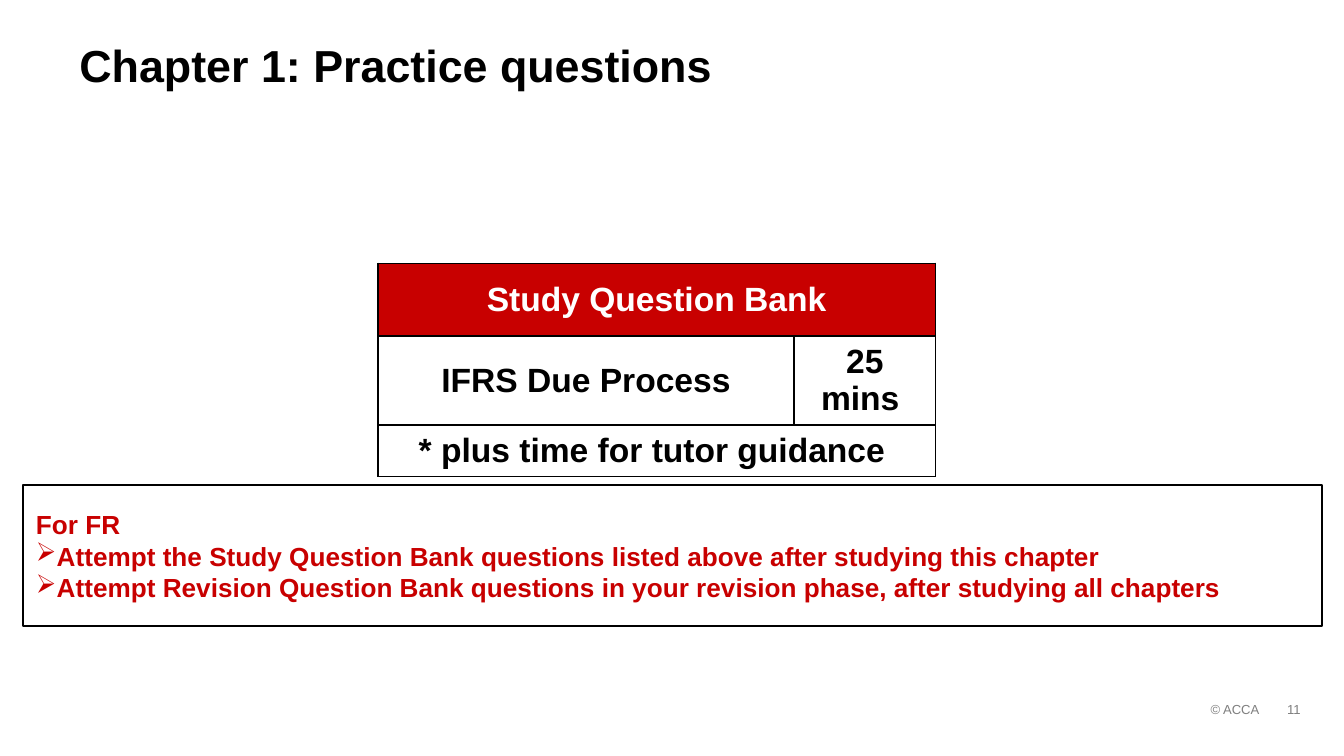
import pptx
import pptx.util
import pptx.dml.color
import pptx.enum.shapes
import pptx.enum.text
import pptx.oxml
import pptx.oxml.ns

Cm, Pt = pptx.util.Cm, pptx.util.Pt
Rgb = pptx.dml.color.RGBColor
Align = pptx.enum.text.PP_ALIGN
Anchor = pptx.enum.text.MSO_ANCHOR

BLACK = Rgb(0x00, 0x00, 0x00)
WHITE = Rgb(0xFF, 0xFF, 0xFF)
RED = Rgb(0xC8, 0x00, 0x00)
GREY = Rgb(0x7F, 0x7F, 0x7F)

# Text formats by role
TITLE = {"size": Pt(24), "bold": True, "color": BLACK}
HEAD = {"size": Pt(18), "bold": True, "color": WHITE}
CELL = {**HEAD, "color": BLACK}
NOTE = {"size": Pt(14), "bold": True, "color": RED}
FOOT = {"size": Pt(7), "bold": False, "color": GREY}


def write(para, text, form, align=Align.LEFT):
    """Fill a paragraph and apply its format."""
    run = para.add_run()
    run.text = text
    para.alignment = align
    for name, value in {"name": "Arial", **form}.items():
        if name == "color":
            run.font.color.rgb = value
        else:
            setattr(run.font, name, value)


def set_frame(frame, side=0, edge=0, anchor=Anchor.TOP):
    """Set the margins and anchor of a text frame."""
    form = {
        "margin_left": Cm(side), "margin_right": Cm(side),
        "margin_top": Cm(edge), "margin_bottom": Cm(edge),
        "vertical_anchor": anchor, "word_wrap": True,
        "auto_size": pptx.enum.text.MSO_AUTO_SIZE.NONE,
    }
    for name, value in form.items():
        setattr(frame, name, value)


def add_title(slide, box):
    title = slide.shapes.title
    title.left, title.top, title.width, title.height = map(Cm, box)
    set_frame(title.text_frame, anchor=Anchor.MIDDLE)
    para = title.text_frame.paragraphs[0]
    para.line_spacing = 0.9
    write(para, "Chapter 1: Practice questions", TITLE)


def add_border(cell):
    props = cell._tc.get_or_add_tcPr()
    for place, side in enumerate(("lnL", "lnR", "lnT", "lnB")):
        props.insert(place, pptx.oxml.parse_xml(
            f'<a:{side} {pptx.oxml.ns.nsdecls("a")} w="{Pt(1)}"><a:solidFill>'
            f'<a:srgbClr val="{BLACK}"/></a:solidFill></a:{side}>'))


def add_bank(slide, box):
    """Question table: full-width head and foot, one split row."""
    table = slide.shapes.add_table(3, 2, *map(Cm, box)).table
    for col, width in zip(table.columns, (7.87, 2.67)):
        col.width = Cm(width)
    for row, height in zip(table.rows, (1.37, 1.68, 0.98)):
        row.height = Cm(height)
    for row in (0, 2):
        table.cell(row, 0).merge(table.cell(row, 1))

    # Fills and borders
    for row in range(3):
        for col in range(2):
            cell = table.cell(row, col)
            cell.fill.solid()
            cell.fill.fore_color.rgb = WHITE if row else RED
            cell.vertical_anchor = Anchor.MIDDLE
            add_border(cell)

    # Wording
    words = {
        (0, 0): "Study Question Bank",
        (1, 0): "IFRS Due Process",
        (1, 1): "25 mins ",
        (2, 0): "* plus time for tutor guidance ",
    }
    for (row, col), text in words.items():
        para = table.cell(row, col).text_frame.paragraphs[0]
        write(para, text, CELL if row else HEAD, Align.CENTER)


def add_note(slide, box):
    """Framed advice with arrow bullets."""
    rect = pptx.enum.shapes.MSO_SHAPE.RECTANGLE
    shape = slide.shapes.add_shape(rect, *map(Cm, box))
    shape.shadow.inherit = False
    shape.fill.background()
    shape.line.color.rgb = BLACK
    shape.line.width = Pt(1.25)
    frame = shape.text_frame
    set_frame(frame, 0.25, 0.2, Anchor.MIDDLE)
    write(frame.paragraphs[0], "For FR", NOTE)
    for text in (
        "Attempt the Study Question Bank questions listed above after studying this chapter",
        "Attempt Revision Question Bank questions in your revision phase, after studying all chapters",
    ):
        para = frame.add_paragraph()
        para._p.get_or_add_pPr().append(pptx.oxml.parse_xml(
            f'<a:buChar {pptx.oxml.ns.nsdecls("a")} char="➢"/>'))
        write(para, text, NOTE)


def add_foot(slide, box, text):
    frame = slide.shapes.add_textbox(*map(Cm, box)).text_frame
    set_frame(frame)
    write(frame.paragraphs[0], text, FOOT, Align.RIGHT)


def main():
    deck = pptx.Presentation()
    deck.slide_width, deck.slide_height = Cm(25.4), Cm(14.29)
    slide = deck.slides.add_slide(deck.slide_layouts.get_by_name("Title Only"))
    add_title(slide, (1.5, 0.79, 21.79, 0.99))
    add_bank(slide, (7.14, 4.98, 10.54, 4.03))
    add_note(slide, (0.43, 9.17, 24.56, 2.67))
    add_foot(slide, (18.11, 13.26, 5.69, 0.3), "© ACCA")
    add_foot(slide, (24, 13.26, 0.58, 0.33), "11")
    deck.save("out.pptx")


if __name__ == "__main__":
    main()
